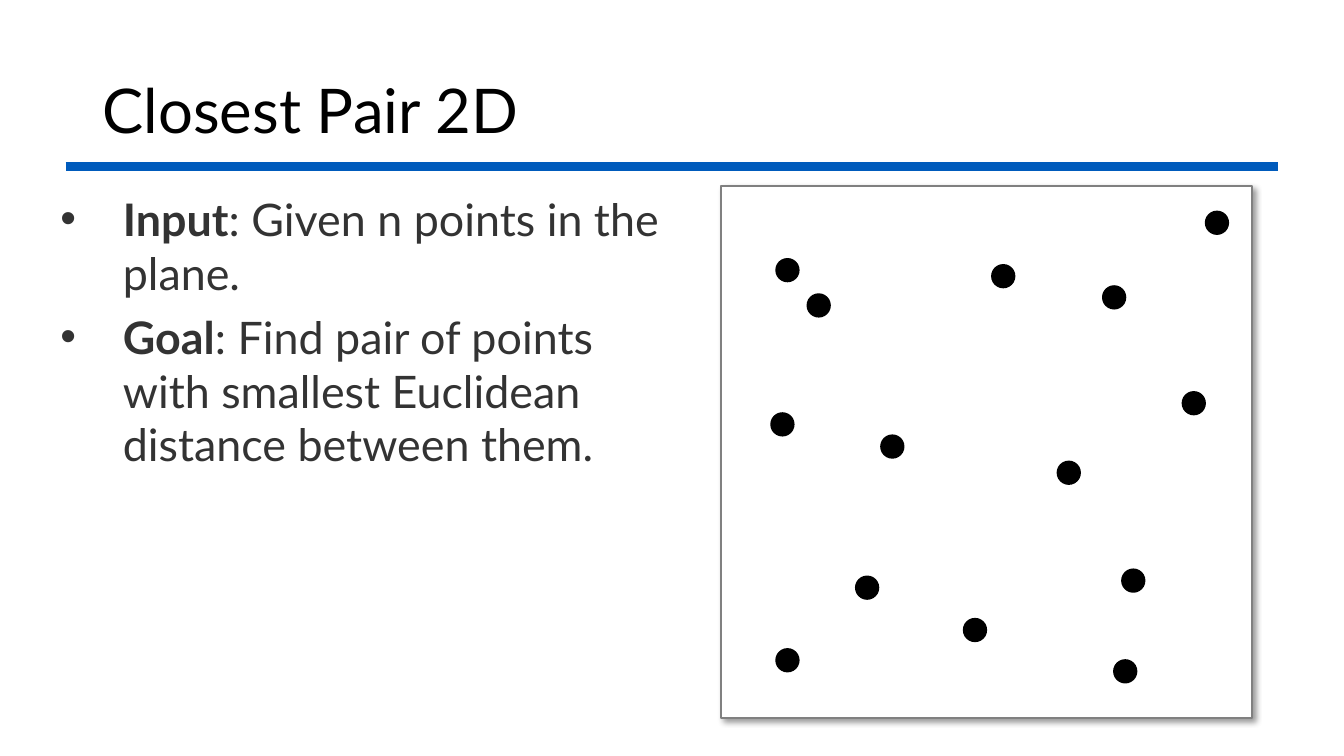
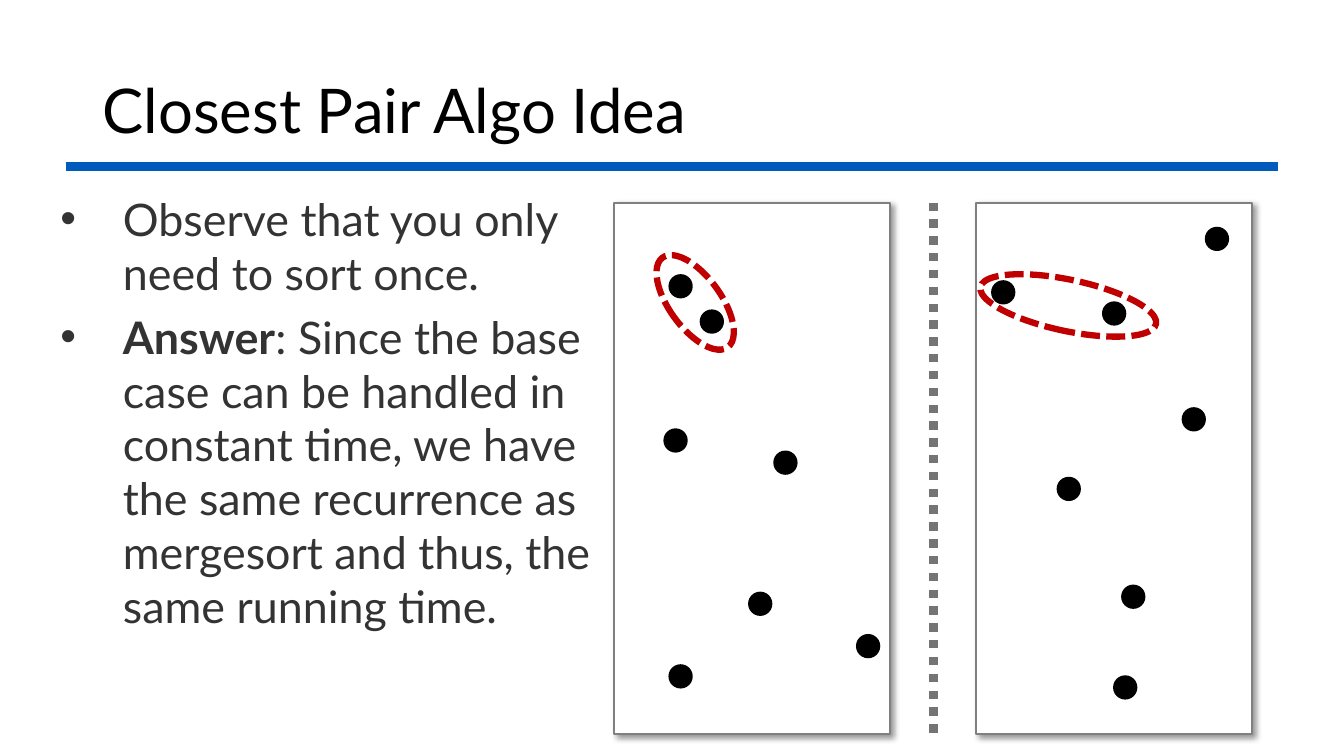
import pptx
import pptx.dml.color
import pptx.enum.dml
import pptx.enum.shapes
import pptx.enum.text
import pptx.oxml.ns
import pptx.util
from lxml import etree
from pptx.util import Inches

COLORS = {
    "title": "000000", "body": "333333", "rule": "005BBC", "panel": "FFFFFF",
    "border": "808080", "dot": "000000", "divider": "747474", "ring": "C00000",
}
FONT = "Lato"
SHAPES = pptx.enum.shapes.MSO_SHAPE
DASHES = pptx.enum.dml.MSO_LINE

LEFT_DOTS = [(0.55, 0.72), (1.59, 2.47), (0.55, 4.59), (2.41, 4.29),
             (0.86, 1.07), (0.5, 2.25), (1.34, 3.87)]
RIGHT_DOTS = [(1.45, 3.8), (1.26, 0.99), (0.16, 0.78), (0.81, 2.73),
              (2.05, 2.04), (1.37, 4.7), (2.28, 0.25)]
DOT_SIZE = 0.22
PANEL_SIDE = 5.27
HALF_WIDTH = 2.74
RIGHT_EDGE = 12.42
RIGHT_START = RIGHT_EDGE - HALF_WIDTH

SLIDES = [
    {
        "title": "Closest Pair 2D",
        "body_size": (6.39, 2.91),
        "bullets": [
            ("Input", ": Given n points in the plane."),
            ("Goal", ": Find pair of points with smallest Euclidean distance between them."),
        ],
        "top": 1.85,
        "panels": [(RIGHT_EDGE - PANEL_SIDE, PANEL_SIDE)],
        "dots": [(RIGHT_EDGE - PANEL_SIDE, LEFT_DOTS), (RIGHT_START, RIGHT_DOTS)],
        "dividers": [],
        "rings": [],
    },
    {
        "title": "Closest Pair Algo Idea",
        "body_size": (5.51, 4.52),
        "bullets": [
            ("", "Observe that you only need to sort once."),
            ("Answer", ": Since the base case can be handled in constant time, we have "
                       "the same recurrence as mergesort and thus, the same running time."),
        ],
        "top": 2.01,
        "panels": [(6.09, HALF_WIDTH), (RIGHT_START, HALF_WIDTH)],
        "dots": [(6.09, LEFT_DOTS), (RIGHT_START, RIGHT_DOTS)],
        "dividers": [9.26],
        "rings": [(6.64, 2.45, 0.51, 1.1, 324), (10.34, 2.14, 0.51, 1.78, 281.9)],
    },
]


def rgb(name):
    return pptx.dml.color.RGBColor.from_string(COLORS[name])


def style_line(line, color, width, dash=None):
    line.color.rgb = rgb(color)
    line.width = pptx.util.Pt(width)
    if dash is not None:
        line.dash_style = dash


def add_child(parent, tag, **attributes):
    return etree.SubElement(parent, pptx.oxml.ns.qn(tag), attributes)


def add_line(shapes, start, end, color, dash=None):
    straight = pptx.enum.shapes.MSO_CONNECTOR.STRAIGHT
    connector = shapes.add_connector(straight, *map(Inches, start + end))
    style_line(connector.line, color, 6, dash)
    add_child(connector._element.spPr, "a:effectLst")


def add_figure(shapes, kind, box, fill, line, width, dash=None):
    shape = shapes.add_shape(kind, *map(Inches, box))
    shape.shadow.inherit = False
    if fill:
        shape.fill.solid()
        shape.fill.fore_color.rgb = rgb(fill)
    else:
        shape.fill.background()
    style_line(shape.line, line, width, dash)
    return shape


def add_panel(shapes, left, top, width):
    panel = add_figure(shapes, SHAPES.RECTANGLE, (left, top, width, PANEL_SIDE),
                       "panel", "border", 1.5)
    effects = panel._element.spPr.find(pptx.oxml.ns.qn("a:effectLst"))
    shadow = add_child(effects, "a:outerShdw", blurRad=str(pptx.util.Pt(4)),
                       dist=str(pptx.util.Pt(3)), dir="2700000", algn="tl", rotWithShape="0")
    add_child(add_child(shadow, "a:srgbClr", val="000000"), "a:alpha", val="40000")


def add_run(paragraph, text, size, color, bold=False):
    run = paragraph.add_run()
    run.text = text
    run.font.name = FONT
    run.font.size = pptx.util.Pt(size)
    run.font.bold = bold
    run.font.color.rgb = rgb(color)


def add_text_frame(slide, *box):
    frame = slide.shapes.add_textbox(*map(Inches, box)).text_frame
    frame.word_wrap = True
    return frame


def add_title(slide, title):
    frame = add_text_frame(slide, 0.92, 0.4, 11.5, 1.45)
    frame.vertical_anchor = pptx.enum.text.MSO_ANCHOR.MIDDLE
    frame.paragraphs[0].line_spacing = 0.9
    add_run(frame.paragraphs[0], title, 44, "title")
    add_line(slide.shapes, (0.65, 1.65), (12.68, 1.65), "rule")


def add_bullets(slide, size, bullets):
    frame = add_text_frame(slide, 0.5, 1.85, *size)
    frame.auto_size = pptx.enum.text.MSO_AUTO_SIZE.SHAPE_TO_FIT_TEXT
    for index, (lead, rest) in enumerate(bullets):
        paragraph = frame.add_paragraph() if index else frame.paragraphs[0]
        paragraph.space_after = pptx.util.Pt(7.5)
        properties = paragraph._p.get_or_add_pPr()
        properties.set("marL", str(Inches(0.62)))
        properties.set("indent", str(-Inches(0.62)))
        add_child(properties, "a:buFont", typeface="Arial")
        add_child(properties, "a:buChar", char="•")
        if lead:
            add_run(paragraph, lead, 32, "body", bold=True)
        add_run(paragraph, rest, 32, "body")


def add_diagram(slide, content):
    shapes = slide.shapes.add_group_shape().shapes
    top = content["top"]
    for left, width in content["panels"]:
        add_panel(shapes, left, top, width)
    for left, dots in content["dots"]:
        for x, y in dots:
            add_figure(shapes, SHAPES.OVAL, (left + x, top + y, DOT_SIZE, DOT_SIZE),
                       "dot", "dot", 1.5)
    for x in content["dividers"]:
        add_line(shapes, (x, top), (x, top + PANEL_SIDE), "divider", DASHES.ROUND_DOT)
    for *box, rotation in content["rings"]:
        ring = add_figure(shapes, SHAPES.OVAL, box, None, "ring", 4.5, DASHES.SQUARE_DOT)
        ring.rotation = rotation


def main():
    presentation = pptx.Presentation()
    presentation.slide_width = Inches(13.33)
    presentation.slide_height = Inches(7.5)
    for content in SLIDES:
        slide = presentation.slides.add_slide(presentation.slide_layouts[6])
        add_title(slide, content["title"])
        add_diagram(slide, content)
        add_bullets(slide, content["body_size"], content["bullets"])
    presentation.save("out.pptx")


if __name__ == "__main__":
    main()
